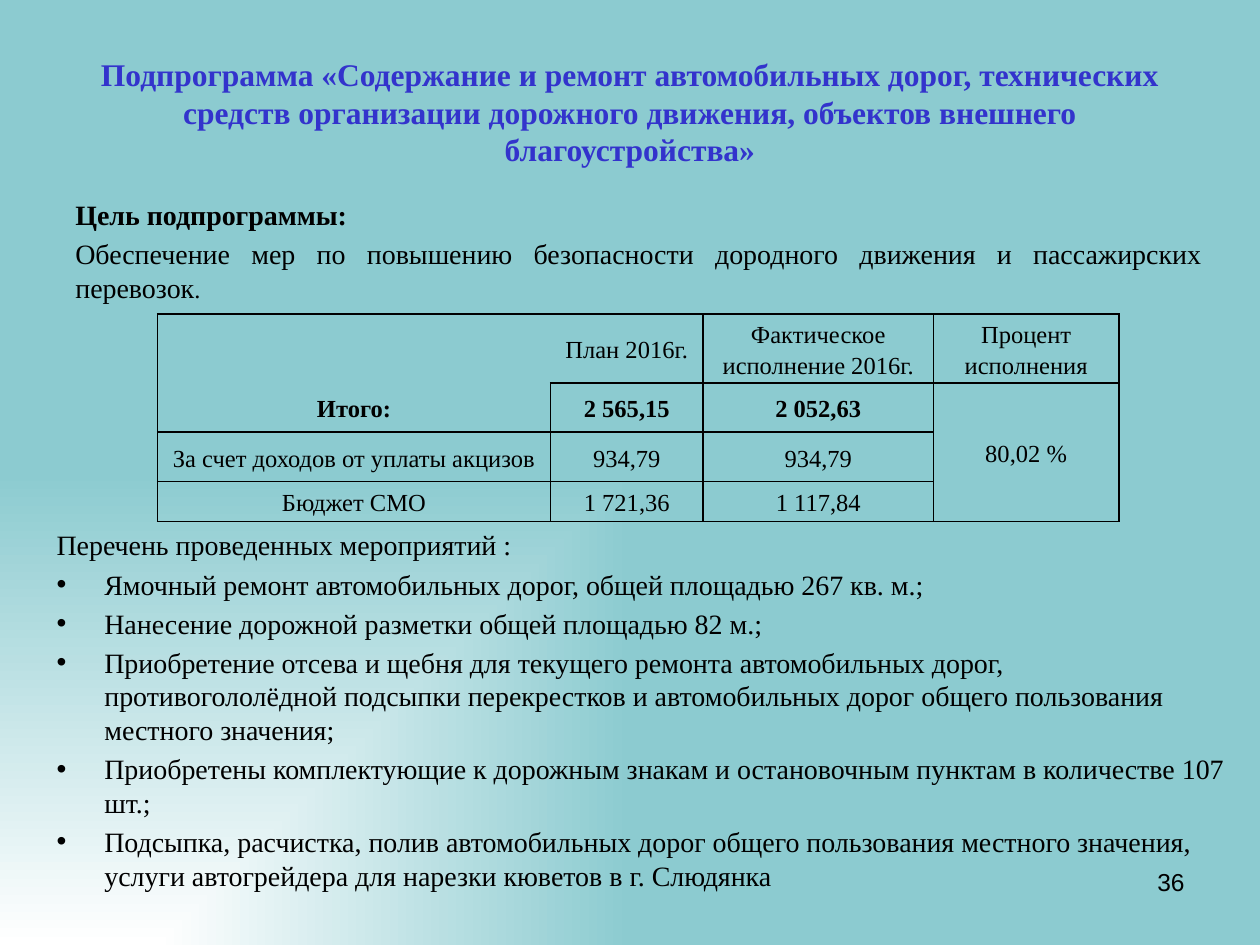
"""Build the slide on the road maintenance subprogramme with its budget table."""
from pptx import Presentation
from pptx.dml.color import RGBColor
from pptx.enum.text import MSO_ANCHOR, MSO_AUTO_SIZE, PP_ALIGN
from pptx.oxml import parse_xml
from pptx.oxml.ns import nsdecls
from pptx.util import Inches, Pt

COLORS = {"title": "3333CC", "text": "000000", "border": "000000",
          "glow": "FFFFFF", "sky": "8CCBD0"}
SERIF = "Times New Roman"


def write(paragraph, text, size=16, name=SERIF, bold=False, color="text"):
    run = paragraph.add_run()
    run.text = text
    for key, value in {"size": Pt(size), "name": name, "bold": bold}.items():
        setattr(run.font, key, value)
    run.font.color.rgb = RGBColor.from_string(COLORS[color])


def add_box(left, top, width, height):
    frame = slide.shapes.add_textbox(*map(Inches, (left, top, width, height))).text_frame
    frame.word_wrap = True
    return frame


prs = Presentation()
prs.slide_width, prs.slide_height = Inches(10), Inches(7.5)
slide = prs.slides.add_slide(prs.slide_layouts[5])

backdrop = slide.background.fill
backdrop.gradient()
for stop, color, position in zip(backdrop.gradient_stops, ("glow", "sky"), (0, 1)):
    stop.color.rgb = RGBColor.from_string(COLORS[color])
    stop.position = position
gradient = slide.background._cSld.find(".//{*}gradFill")
gradient.replace(gradient.find("{*}lin"), parse_xml(
    f'<a:path {nsdecls("a")} path="rect">'
    '<a:fillToRect t="100000" r="100000"/></a:path>'))

title = slide.shapes.title
for key, value in {"left": 0.5, "top": 0.3, "width": 9, "height": 1.17}.items():
    setattr(title, key, Inches(value))
heading = title.text_frame
heading.auto_size = MSO_AUTO_SIZE.NONE
heading.vertical_anchor = MSO_ANCHOR.MIDDLE
heading.paragraphs[0].alignment = PP_ALIGN.CENTER
write(heading.paragraphs[0],
      "Подпрограмма «Содержание и ремонт автомобильных дорог, технических средств "
      "организации дорожного движения, объектов внешнего благоустройства»",
      size=18, bold=True, color="title")

page_number = add_box(7.17, 6.83, 2.33, 0.52).paragraphs[0]
page_number.alignment = PP_ALIGN.RIGHT
write(page_number, "36", size=14, name="Arial")

goal = add_box(0.5, 1.52, 9.14, 0.97)
goal_label, goal_text = goal.paragraphs[0], goal.add_paragraph()
goal_label.alignment = goal_text.alignment = PP_ALIGN.JUSTIFY
goal_text.space_before = Pt(3.2)
write(goal_label, "Цель подпрограммы:", bold=True)
write(goal_text, "Обеспечение мер по повышению безопасности дородного движения "
                 "и пассажирских перевозок")
write(goal_text, ".", size=14)

budget_rows = [
    ["", "План 2016г.", "Фактическое исполнение 2016г.", "Процент исполнения"],
    ["Итого:", "2 565,15", "2 052,63", "80,02 %"],
    ["За счет доходов от уплаты акцизов", "934,79", "934,79", ""],
    ["Бюджет СМО", "1 721,36", "1 117,84", ""],
]
column_widths = [3.12, 1.21, 1.83, 1.47]
row_heights = [0.55, 0.39, 0.39, 0.32]
open_sides = {(0, 0): "RB", (0, 1): "L", (1, 0): "T"}
budget = slide.shapes.add_table(4, 4, Inches(1.25), Inches(2.49),
                                Inches(sum(column_widths)),
                                Inches(sum(row_heights))).table
budget.first_row = budget.horz_banding = False
for column, width in zip(budget.columns, column_widths):
    column.width = Inches(width)
for row, height in zip(budget.rows, row_heights):
    row.height = Inches(height)
budget.cell(1, 3).merge(budget.cell(3, 3))

cell_format = {"margin_left": Inches(0.08), "margin_right": Inches(0.08),
               "margin_top": 0, "margin_bottom": 0,
               "vertical_anchor": MSO_ANCHOR.MIDDLE}
for r, values in enumerate(budget_rows):
    for c, value in enumerate(values):
        cell = budget.cell(r, c)
        for key, setting in cell_format.items():
            setattr(cell, key, setting)
        cell.fill.background()
        for i, side in enumerate("LRTB"):
            stroke = ("<a:noFill/>" if side in open_sides.get((r, c), "") else
                      f'<a:solidFill><a:srgbClr val="{COLORS["border"]}"/></a:solidFill>')
            cell._tc.get_or_add_tcPr().insert(i, parse_xml(
                f'<a:ln{side} {nsdecls("a")} w="12700">{stroke}</a:ln{side}>'))
        if value:
            figure = cell.text_frame.paragraphs[0]
            figure.alignment = PP_ALIGN.CENTER
            figure.line_spacing = 1.15
            write(figure, value, size=14, bold=r == 1 and c < 3)

works = add_box(0.35, 4.14, 9.51, 2.99)
write(works.paragraphs[0], "Перечень проведенных мероприятий :")
for work in [
    "Ямочный ремонт автомобильных дорог, общей площадью 267 кв. м.;",
    "Нанесение дорожной разметки общей площадью 82 м.;",
    "Приобретение отсева и щебня для текущего ремонта автомобильных дорог, "
    "противогололёдной подсыпки перекрестков и автомобильных дорог общего "
    "пользования местного значения;",
    "Приобретены комплектующие к дорожным знакам и остановочным пунктам "
    "в количестве 107 шт.;",
    "Подсыпка, расчистка, полив автомобильных дорог общего пользования местного "
    "значения, услуги автогрейдера для нарезки кюветов в г. Слюдянка",
]:
    item = works.add_paragraph()
    properties = item._p.get_or_add_pPr()
    properties.set("marL", str(Inches(0.38)))
    properties.set("indent", str(-Inches(0.38)))
    properties.append(parse_xml(f'<a:buFont {nsdecls("a")} typeface="Arial"/>'))
    properties.append(parse_xml(f'<a:buChar {nsdecls("a")} char="•"/>'))
    item.space_before = Pt(3.2)
    write(item, work)

prs.save("out.pptx")
